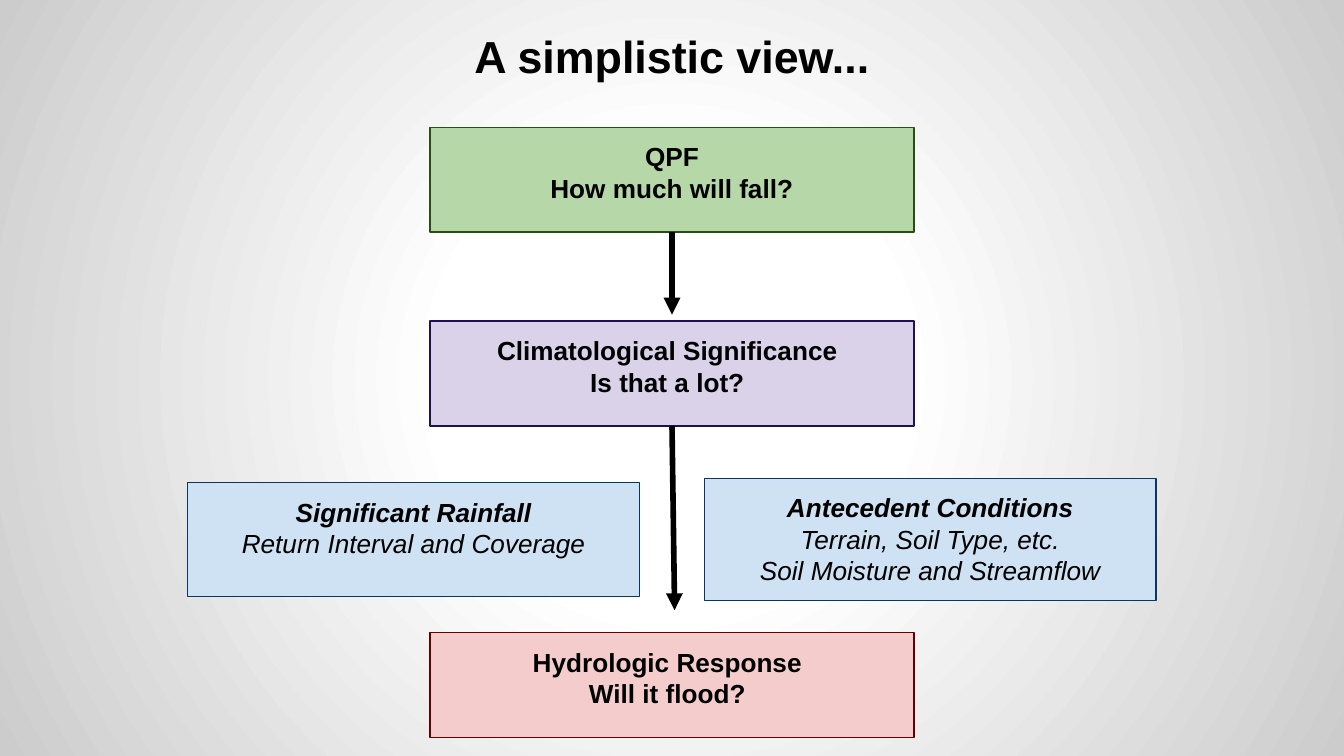
from dataclasses import dataclass

from pptx import Presentation, util as u
from pptx.dml.color import RGBColor
from pptx.enum import shapes, text
from pptx.oxml import parse_xml
from pptx.oxml.ns import nsdecls, qn


@dataclass(frozen=True)
class Theme:
    font: str = "Arial"
    ink: str = "000000"
    title_size: float = 24
    body_size: float = 14
    green: tuple = ("B6D7A8", "274E13")
    purple: tuple = ("D9D2E9", "20124D")
    red: tuple = ("F4CCCC", "660000")
    blue: tuple = ("CFE2F3", "073763")
    backdrop: tuple = ((0, "FFFFFF"), (30, "FFFFFF"), (100, "CCCCCC"))


theme = Theme()


def write_lines(shape, lines, right_inset=7.2):
    frame = shape.text_frame
    frame_format = {
        "word_wrap": True,
        "vertical_anchor": text.MSO_ANCHOR.TOP,
        "margin_left": u.Pt(7.2),
        "margin_top": u.Pt(7.2),
        "margin_right": u.Pt(right_inset),
        "margin_bottom": u.Pt(7.2),
    }
    for name, value in frame_format.items():
        setattr(frame, name, value)
    for index, (words, font_format) in enumerate(lines):
        paragraph = frame.add_paragraph() if index else frame.paragraphs[0]
        paragraph.alignment = text.PP_ALIGN.CENTER
        run = paragraph.add_run()
        run.text = words
        for name, value in {"name": theme.font, **font_format}.items():
            setattr(run.font, name, value)
        run.font.color.rgb = RGBColor.from_string(theme.ink)


presentation = Presentation()
presentation.slide_width = u.Pt(720)
presentation.slide_height = u.Pt(405)
slide = presentation.slides.add_slide(presentation.slide_layouts[6])

slide.background.fill.solid()
solid_fill = next(slide.element.iter(qn("a:solidFill")))
stops = "".join(
    f'<a:gs pos="{position * 1000}"><a:srgbClr val="{color}"/></a:gs>'
    for position, color in theme.backdrop
)
gradient = parse_xml(
    f'<a:gradFill {nsdecls("a")}><a:gsLst>{stops}</a:gsLst><a:path path="circle">'
    '<a:fillToRect l="50000" t="50000" r="50000" b="50000"/></a:path></a:gradFill>'
)
solid_fill.getparent().replace(solid_fill, gradient)

bold = {"size": u.Pt(theme.body_size), "bold": True, "italic": False}
bold_italic = {**bold, "italic": True}
italic = {**bold_italic, "bold": False}

title = slide.shapes.add_textbox(u.Pt(36), u.Pt(8), u.Pt(648), u.Pt(41))
write_lines(title, [("A simplistic view...", {**bold, "size": u.Pt(theme.title_size)})])

step_left, step_width, step_height = 230.4, 259.2, 56.2
factor_width = 242
boxes = [
    ("qpf", (step_left, 68.2, step_width, step_height), theme.green, 7.2,
     [("QPF", bold), ("How much will fall?", bold)]),
    ("climatology", (step_left, 172, step_width, step_height), theme.purple, 12,
     [("Climatological Significance", bold), ("Is that a lot?", bold)]),
    ("response", (step_left, 338.9, step_width, step_height), theme.red, 12,
     [("Hydrologic Response", bold), ("Will it flood?", bold)]),
    ("conditions", (377.4, 256.2, factor_width, 65.4), theme.blue, 7.2,
     [("Antecedent Conditions", bold_italic), ("Terrain, Soil Type, etc.", italic),
      ("Soil Moisture and Streamflow", italic)]),
    ("rainfall", (100.6, 258.6, factor_width, 61), theme.blue, 7.2,
     [("Significant Rainfall", bold_italic), ("Return Interval and Coverage", italic)]),
]
box_shapes = {}
for box_name, bounds, (fill, outline), right_inset, lines in boxes:
    shape = slide.shapes.add_shape(shapes.MSO_SHAPE.RECTANGLE, *map(u.Pt, bounds))
    shape.shadow.inherit = False
    shape.fill.solid()
    shape.fill.fore_color.rgb = RGBColor.from_string(fill)
    shape.line.color.rgb = RGBColor.from_string(outline)
    shape.line.width = u.Pt(0.75)
    write_lines(shape, lines, right_inset)
    box_shapes[box_name] = shape

for source, end_x, end_y in [("qpf", 360, 168.5), ("climatology", 361.4, 326.9)]:
    box = box_shapes[source]
    arrow = slide.shapes.add_connector(
        shapes.MSO_CONNECTOR.STRAIGHT, u.Pt(360), box.top + box.height, u.Pt(end_x), u.Pt(end_y)
    )
    arrow.begin_connect(box, 2)
    arrow.line.color.rgb = RGBColor.from_string(theme.ink)
    arrow.line.width = u.Pt(3)
    arrow.line._get_or_add_ln().append(parse_xml(f'<a:tailEnd {nsdecls("a")} type="triangle"/>'))
    arrow.element.spPr.append(parse_xml(f'<a:effectLst {nsdecls("a")}/>'))

presentation.save("out.pptx")
